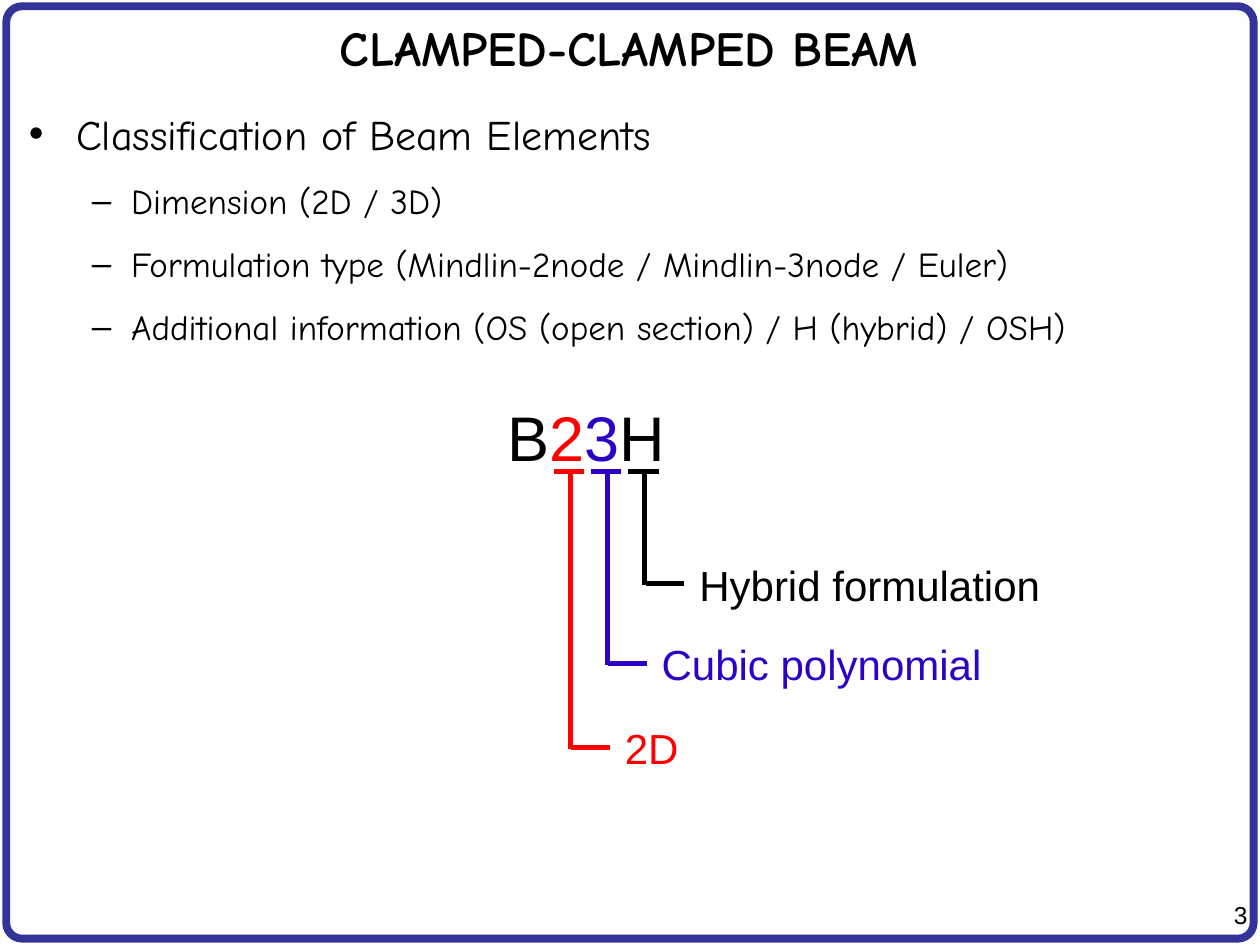
"""Build the slide on naming clamped-clamped beam elements."""
from lxml import etree
from pptx import Presentation
from pptx.dml.color import RGBColor
from pptx.enum import shapes, text
from pptx.oxml import ns
from pptx.util import Pt

BLACK, RED, BLUE, FRAME = "000000", "FF0000", "2C02C6", "333399"


def style(r, size, color, font="Arial", bold=False):
    """Format one run."""
    r.font.size, r.font.name, r.font.bold = Pt(size), font, bold
    r.font.color.rgb = RGBColor.from_string(color)


def add_text(x, y, w, h, lines, wrap=False):
    """Add a text box with one paragraph for each line."""
    tf = s.shapes.add_textbox(Pt(x), Pt(y), Pt(w), Pt(h)).text_frame
    tf.word_wrap = wrap
    tf.text = "\n".join(lines)
    return tf


prs = Presentation()
prs.slide_width, prs.slide_height = Pt(720), Pt(540)
s = prs.slides.add_slide(prs.slide_layouts[5])

sp = s.shapes.add_shape(shapes.MSO_SHAPE.ROUNDED_RECTANGLE, Pt(3.6), Pt(3.6), Pt(712.8), Pt(532.8))
sp.adjustments[0] = 0.017
sp.shadow.inherit = False
sp.fill.background()
sp.line.color.rgb = RGBColor.from_string(FRAME)
sp.line.width = Pt(4.5)

title = s.shapes.title
title.left, title.top, title.width, title.height = Pt(2.9), Pt(3.6), Pt(712.8), Pt(46.8)
tf = title.text_frame
tf.text = "CLAMPED-CLAMPED BEAM"
tf.vertical_anchor = text.MSO_ANCHOR.MIDDLE
tf.paragraphs[0].alignment = text.PP_ALIGN.CENTER
style(tf.paragraphs[0].runs[0], 28, BLACK, "Comic Neue", True)

tf = add_text(9.4, 58.3, 701.3, 462.2, [
    "Classification of Beam Elements",
    "Dimension (2D / 3D)",
    "Formulation type (Mindlin-2node / Mindlin-3node / Euler)",
    "Additional information (OS (open section) / H (hybrid) / OSH)",
], wrap=True)
for i, p in enumerate(tf.paragraphs):
    level, size, margin, hang, bullet = (1, 20, 58.5, 22.5, "–") if i else (0, 24, 27, 27, "•")
    p.level = level
    p.space_before = Pt(12)
    style(p.runs[0], size, BLACK, "Comic Neue")
    pPr = p._p.get_or_add_pPr()
    pPr.set("marL", str(Pt(margin)))
    pPr.set("indent", str(-Pt(hang)))
    etree.SubElement(pPr, ns.qn("a:buFont")).set("typeface", "Arial")
    etree.SubElement(pPr, ns.qn("a:buChar")).set("char", bullet)

p = add_text(247, 224, 142, 51, [""]).paragraphs[0]
p._p.get_or_add_pPr().set("marL", str(Pt(36)))
for letter, color in zip("B23H", (BLACK, RED, BLUE, BLACK)):
    r = p.add_run()
    r.text = letter
    style(r, 36, color)

brackets = [
    ("2D", RED, 326, 427, 45),
    ("Cubic polynomial", BLUE, 347, 379, 199),
    ("Hybrid formulation", BLACK, 368.5, 333.5, 212),
]
top = 269.5
for label, color, x, foot, width in brackets:
    group = s.shapes.add_group_shape()
    for x1, y1, x2, y2 in [
        (x - 9.5, top, x + 8, top),
        (x, top, x, foot + 1),
        (x + 0.5, foot, x + 22.5, foot),
    ]:
        line = group.shapes.add_connector(
            shapes.MSO_CONNECTOR.STRAIGHT, Pt(x1), Pt(y1), Pt(x2), Pt(y2))
        line.line.color.rgb = RGBColor.from_string(color)
        line.line.width = Pt(2.75)
        etree.SubElement(line._element.spPr, ns.qn("a:effectLst"))
    tf = add_text(x + 24, foot - 17.5, width, 36, [label])
    style(tf.paragraphs[0].runs[0], 24, color)

p = add_text(681, 511, 39, 24, ["3"], wrap=True).paragraphs[0]
p.alignment = text.PP_ALIGN.RIGHT
style(p.runs[0], 14, BLACK)

prs.save("out.pptx")
